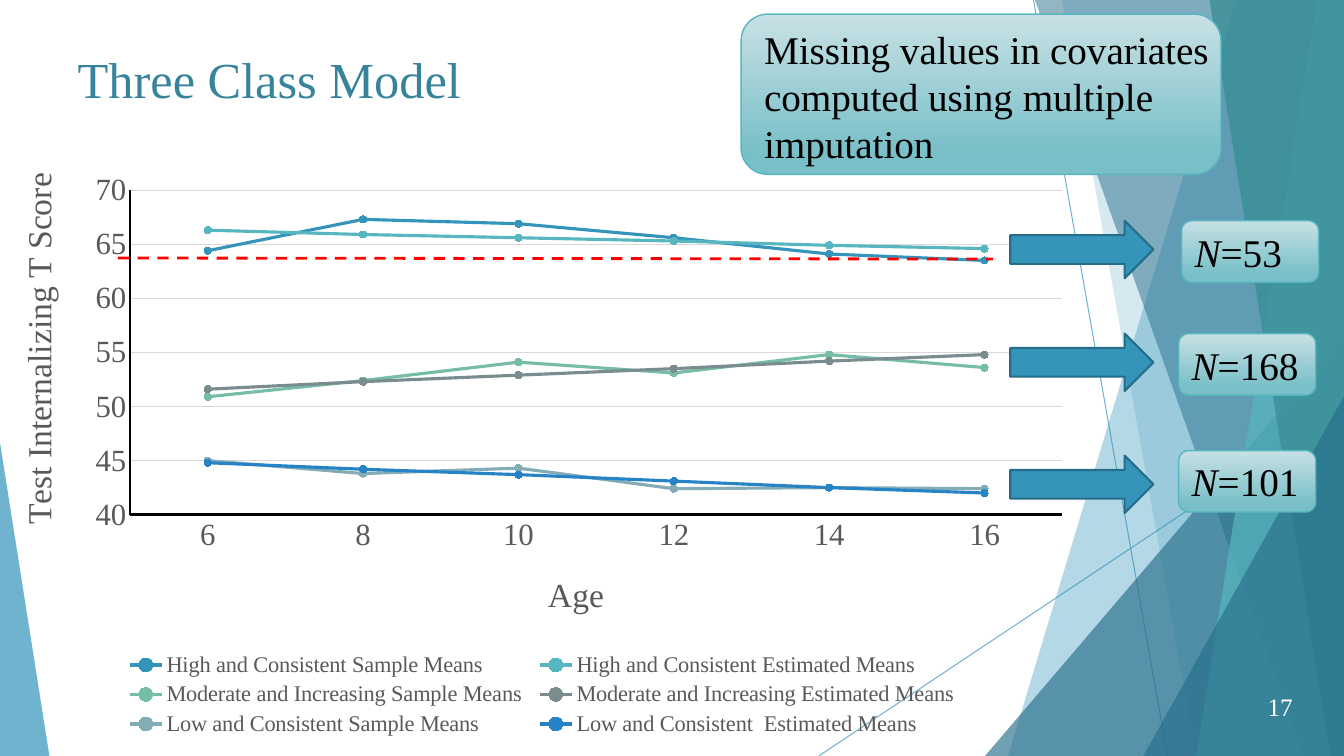
from lxml import etree
from pptx import Presentation
from pptx import util as u
from pptx.chart.data import CategoryChartData
from pptx.dml.color import RGBColor
from pptx.enum import chart as charts
from pptx.enum import dml, shapes, text
from pptx.oxml import ns

WIDTH, HEIGHT = u.Inches(13.33), u.Inches(7.5)
SERIF = "Times New Roman"
COLOURS = {
    "blue": "3494BA", "deep": "276F8B", "teal": "58B6C0", "sea": "3A8F98",
    "edge": "266D8A", "title": "37839B", "pale": "C7E1E5", "mist": "78BFC7",
    "green": "75BDA7", "grey": "7A8C8E", "steel": "84ACB6", "azure": "2683C6",
    "black": "000000", "white": "FFFFFF", "red": "FF0000",
    "label": "595959", "grid": "D9D9D9",
}
AGES = ["6", "8", "10", "12", "14", "16"]
SERIES = [
    ("High and Consistent Sample Means", "blue", [64.4, 67.3, 66.9, 65.6, 64.1, 63.5]),
    ("High and Consistent Estimated Means", "teal", [66.3, 65.9, 65.6, 65.3, 64.9, 64.6]),
    ("Moderate and Increasing Sample Means", "green", [50.9, 52.4, 54.1, 53.1, 54.8, 53.6]),
    ("Moderate and Increasing Estimated Means", "grey", [51.6, 52.3, 52.9, 53.5, 54.2, 54.8]),
    ("Low and Consistent Sample Means", "steel", [45, 43.8, 44.3, 42.4, 42.5, 42.4]),
    ("Low and Consistent  Estimated Means", "azure", [44.8, 44.2, 43.7, 43.1, 42.5, 42]),
]
GROUPS = [("53", 87.92, 29.2, 29.2), ("168", 87.7, 44.13, 44.13), ("101", 87.7, 59.6, 60.27)]


def colour(name):
    """Return a named colour."""
    return RGBColor.from_string(COLOURS[name])


def spot(*shares):
    """Turn percentages of the slide's width and height, in turn, into lengths."""
    return [int(share * (HEIGHT if i % 2 else WIDTH) / 100) for i, share in enumerate(shares)]


def fade(shape, opacity):
    """Make the colours of a shape partly transparent."""
    for tint in list(shape._element.spPr.iter(ns.qn("a:srgbClr"))):
        etree.SubElement(tint, ns.qn("a:alpha"), val=str(opacity * 1000))


def style_font(font, size, name="black"):
    """Set the typeface, size and colour of a font."""
    font.name, font.size, font.bold = SERIF, u.Pt(size), False
    font.color.rgb = colour(name)


def style_line(line, name, width):
    """Set the colour and width of a line."""
    line.color.rgb = colour(name)
    line.width = u.Pt(width)


def add_rule(page, ends, name, width):
    """Draw a straight line."""
    rule = page.shapes.add_connector(shapes.MSO_CONNECTOR.STRAIGHT, *spot(*ends))
    style_line(rule.line, name, width)
    etree.SubElement(rule._element.spPr, ns.qn("a:effectLst"))
    return rule


def paint_facet(shape, name, opacity):
    """Fill a backdrop shape with a translucent colour."""
    shape.shadow.inherit = False
    shape.line.fill.background()
    shape.fill.solid()
    shape.fill.fore_color.rgb = colour(name)
    fade(shape, opacity)


def add_band(page, top, bottom, name, opacity):
    """Draw a slanted band that reaches the right edge."""
    builder = page.shapes.build_freeform(top, 0, scale=(WIDTH / 100, HEIGHT / 100))
    builder.add_line_segments([(100, 0), (100, 100), (bottom, 100)], close=True)
    paint_facet(builder.convert_to_shape(), name, opacity)


def add_corner(page, area, apex, name, opacity):
    """Draw a right-angled triangle in a bottom corner."""
    corner = page.shapes.add_shape(shapes.MSO_SHAPE.ISOSCELES_TRIANGLE, *spot(*area))
    corner.adjustments[0] = apex
    paint_facet(corner, name, opacity)


def add_backdrop(page):
    """Draw the translucent facets of the background."""
    for ends in ((76.9, 0, 86.87, 100), (100, 53.73, 60.92, 100)):
        fade(add_rule(page, ends, "blue", 0.75), 70)
    add_band(page, 92.12, 75.32, "blue", 36)
    add_band(page, 78.77, 88.75, "blue", 20)
    add_corner(page, (73.29, 44.4, 26.71, 55.6), 1, "deep", 66)
    add_band(page, 76.59, 96.85, "deep", 50)
    add_band(page, 97.75, 89.42, "teal", 70)
    add_band(page, 89.72, 98.87, "sea", 80)
    add_corner(page, (85.07, 52.4, 14.93, 47.6), 1, "deep", 66)
    add_corner(page, (0, 58.53, 3.68, 41.47), 0, "blue", 70)


def set_title(page):
    """Place and format the title."""
    title = page.shapes.title
    title.left, title.top, title.width, title.height = spot(5.03, 5.73, 70.52, 19.2)
    title.text_frame.text = "Three Class Model"
    title.text_frame.vertical_anchor = text.MSO_ANCHOR.TOP
    para = title.text_frame.paragraphs[0]
    para.alignment = text.PP_ALIGN.LEFT
    style_font(para.font, 36, "title")


def add_label(page, area, words, size, name, align, anchor):
    """Add a wrapped text box with one paragraph."""
    frame = page.shapes.add_textbox(*spot(*area)).text_frame
    frame.word_wrap, frame.vertical_anchor = True, anchor
    para = frame.paragraphs[0]
    para.text, para.alignment = words, align
    style_font(para.font, size, name)


def add_panel(page, area):
    """Add a rounded panel with a vertical gradient."""
    panel = page.shapes.add_shape(shapes.MSO_SHAPE.ROUNDED_RECTANGLE, *spot(*area))
    panel.shadow.inherit = False
    panel.fill.gradient()
    panel.fill.gradient_angle = 270
    for stop, name, position in zip(panel.fill.gradient_stops, ("pale", "mist"), (0, 0.88)):
        stop.color.rgb, stop.position = colour(name), position
    style_line(panel.line, "teal", 1)
    return panel


def add_group_size(page, count, left, top, arrow_top):
    """Add an arrow and the panel with a class size."""
    panel = add_panel(page, (left, top, 10.2, 8.13))
    panel.text_frame.vertical_anchor = text.MSO_ANCHOR.MIDDLE
    para = panel.text_frame.paragraphs[0]
    para.alignment = text.PP_ALIGN.LEFT
    style_font(para.font, 28)
    for words, italic in (("N", True), ("=" + count, False)):
        span = para.add_run()
        span.text, span.font.italic = words, italic
    arrow = page.shapes.add_shape(shapes.MSO_SHAPE.RIGHT_ARROW, *spot(75.17, arrow_top, 10.65, 7.6))
    arrow.shadow.inherit = False
    arrow.fill.solid()
    arrow.fill.fore_color.rgb = colour("blue")
    style_line(arrow.line, "edge", 1.5)


def lay_out(element, index, **shares):
    """Place a chart part by shares of the chart's size."""
    for old in element.findall(ns.qn("c:layout")):
        element.remove(old)
    layout = etree.Element(ns.qn("c:layout"))
    manual = etree.SubElement(layout, ns.qn("c:manualLayout"))
    if index == 0:
        etree.SubElement(manual, ns.qn("c:layoutTarget"), val="inner")
    for side in ("x", "y"):
        etree.SubElement(manual, ns.qn(f"c:{side}Mode"), val="edge")
    for side, share in shares.items():
        etree.SubElement(manual, ns.qn(f"c:{side}"), val=str(share))
    element.insert(index, layout)


def style_axis(axis, words, x, y):
    """Format an axis and its title."""
    axis.major_tick_mark = axis.minor_tick_mark = charts.XL_TICK_MARK.NONE
    style_font(axis.tick_labels.font, 22, "label")
    style_line(axis.format.line, "black", 2)
    frame = axis.axis_title.text_frame
    frame.text = words
    style_font(frame.paragraphs[0].font, 24, "label")
    lay_out(axis.axis_title._element, 1, x=x, y=y)


def add_score_chart(page):
    """Add the line chart of scores by age."""
    data = CategoryChartData()
    data.categories = AGES
    for name, _, values in SERIES:
        data.add_series(name, values)
    area = spot(0, 21.33, 80.65, 76.67)
    chart = page.shapes.add_chart(charts.XL_CHART_TYPE.LINE_MARKERS, *area, data).chart
    chart.has_title = False
    chart.font.name, chart.font.size = "Cabin", u.Pt(10)
    chart.plots[0].vary_by_categories = False
    for series, (_, name, _) in zip(chart.plots[0].series, SERIES):
        series.smooth = False
        style_line(series.format.line, name, 2.25)
        series.marker.style, series.marker.size = charts.XL_MARKER_STYLE.CIRCLE, 5
        series.marker.format.fill.solid()
        series.marker.format.fill.fore_color.rgb = colour(name)
        style_line(series.marker.format.line, name, 0.75)
    style_axis(chart.category_axis, "Age", 0.5, 0.7)
    scores = chart.value_axis
    style_axis(scores, "Test Internalizing T Score", 0.01, 0.01)
    scores.axis_title._element.find(".//" + ns.qn("a:bodyPr")).set("rot", "-5400000")
    scores.minimum_scale, scores.maximum_scale, scores.major_unit = 40, 70, 5
    style_line(scores.major_gridlines.format.line, "grid", 0.75)
    chart.has_legend = True
    chart.legend.position = charts.XL_LEGEND_POSITION.BOTTOM
    chart.legend.include_in_layout = False
    style_font(chart.legend.font, 16, "label")
    lay_out(chart.legend._element, 1, x=0.11, y=0.84, w=0.78, h=0.16)
    lay_out(chart._chartSpace.chart.plotArea, 0, x=0.12, y=0.05, w=0.86, h=0.56)


def main():
    """Build and save the slide."""
    deck = Presentation()
    deck.slide_width, deck.slide_height = WIDTH, HEIGHT
    page = deck.slides.add_slide(deck.slide_layouts[5])
    add_backdrop(page)
    set_title(page)
    add_score_chart(page)
    add_label(page, (91.3, 90.8, 5.63, 5.33), "17", 18, "white",
              text.PP_ALIGN.RIGHT, text.MSO_ANCHOR.MIDDLE)
    add_panel(page, (55.14, 1.87, 35.71, 21.2))
    add_label(page, (56.11, 2.67, 40.44, 20.13),
              "Missing values in covariates computed using multiple imputation",
              28, "black", text.PP_ALIGN.LEFT, text.MSO_ANCHOR.TOP)
    for group in GROUPS:
        add_group_size(page, *group)
    cutoff = add_rule(page, (8.78, 34.13, 73.89, 34.27), "red", 2)
    cutoff.line.dash_style = dml.MSO_LINE.DASH
    deck.save("out.pptx")


if __name__ == "__main__":
    main()
